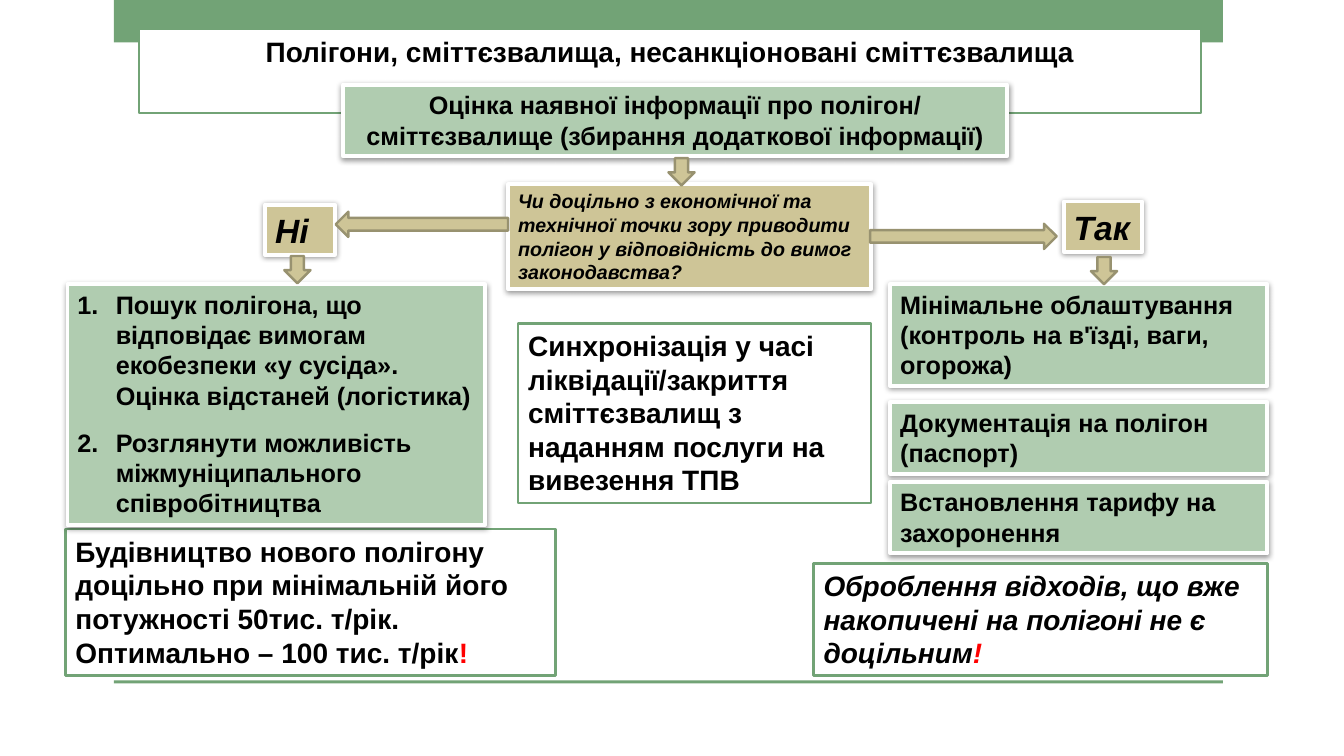
"""Builds the landfill decision flowchart slide."""
from dataclasses import dataclass

from lxml import etree
from pptx import Presentation
from pptx import util as u
from pptx.dml.color import RGBColor
from pptx.enum import shapes, text
from pptx.oxml.ns import qn

GREEN, PALE_GREEN, SAND, OLIVE = "72A376", "B0CCB0", "CEC597", "989270"
WHITE, BLACK, RED = "FFFFFF", "000000", "FF0000"
SHAPE = shapes.MSO_SHAPE
ALIGN = text.PP_ALIGN


@dataclass(frozen=True)
class Box:
    """A rectangle holding text, with a shadow when it is a flowchart step."""
    at: tuple[float, float, float, float]
    paragraphs: tuple[str, ...]
    size: int
    fill: str = WHITE
    italic: bool = False
    align: ALIGN = ALIGN.LEFT
    alert: str = ""
    numbered: bool = False
    space_after: int = 0


@dataclass(frozen=True)
class Arrow:
    """A block arrow between two steps."""
    at: tuple[float, float, float, float]
    kind: SHAPE


TITLE = Box((1.38, 0.29, 10.53, 0.44),
            ("Полігони, сміттєзвалища, несанкціоновані сміттєзвалища",), 20, align=ALIGN.CENTER)

BANDS = ((1.13, 0, 11, 0.42), (1.13, 6.75, 11, 0.03))

BOXES = (
    Box((0.65, 5.25, 4.86, 1.45),
        ("Будівництво нового полігону доцільно при мінімальній його потужності "
         "50тис. т/рік. Оптимально – 100 тис. т/рік",), 20, alert="!"),
    Box((3.4, 0.84, 6.59, 0.71),
        ("Оцінка наявної інформації про полігон/ сміттєзвалище "
         "(збирання додаткової інформації)",), 18, PALE_GREEN, align=ALIGN.CENTER),
    Box((8.83, 2.82, 3.74, 1.01),
        ("Мінімальне облаштування (контроль на в'їзді, ваги, огорожа)",), 18, PALE_GREEN),
    Box((8.83, 3.99, 3.74, 0.71), ("Документація на полігон (паспорт)",), 18, PALE_GREEN),
    Box((5.04, 1.83, 3.6, 1.04),
        ("Чи доцільно з економічної та технічної точки зору приводити полігон "
         "у відповідність до вимог законодавства?",), 14, SAND, italic=True),
    Box((8.83, 4.78, 3.74, 0.71), ("Встановлення тарифу на захоронення",), 18, PALE_GREEN),
    Box((0.67, 2.82, 4.14, 2.39),
        ("Пошук полігона, що відповідає вимогам екобезпеки «у сусіда». "
         "Оцінка відстаней (логістика)",
         "Розглянути можливість міжмуніципального співробітництва"),
        18, PALE_GREEN, numbered=True, space_after=12),
    Box((2.63, 2.03, 0.69, 0.5), ("Ні",), 24, SAND, italic=True),
    Box((10.55, 2, 0.78, 0.5), ("Так",), 24, SAND, italic=True),
    Box((8.07, 5.59, 4.5, 1.11),
        ("Оброблення відходів, що вже накопичені на полігоні не є доцільним",),
        20, italic=True, alert="!"),
    Box((5.14, 3.21, 3.5, 1.78),
        ("Синхронізація у часі ліквідації/закриття сміттєзвалищ "
         "з наданням послуги на вивезення ТПВ",), 20),
)

ARROWS = (
    Arrow((8.63, 2.22, 1.85, 0.25), SHAPE.RIGHT_ARROW),
    Arrow((3.33, 2.1, 1.71, 0.25), SHAPE.LEFT_ARROW),
    Arrow((2.82, 2.54, 0.26, 0.27), SHAPE.DOWN_ARROW),
    Arrow((10.82, 2.55, 0.26, 0.27), SHAPE.DOWN_ARROW),
    Arrow((6.63, 1.57, 0.26, 0.27), SHAPE.DOWN_ARROW),
)


def paint(color_format, color: str) -> None:
    """Set a colour from a hex string."""
    color_format.rgb = RGBColor.from_string(color)


def outline(shape, fill: str, line: str = "", width: float = 0) -> None:
    """Fill a shape and draw its border, or none."""
    shape.fill.solid()
    paint(shape.fill.fore_color, fill)
    if line:
        shape.line.width = u.Pt(width)
        paint(shape.line.color, line)
    else:
        shape.line.fill.background()


def add_shape(slide, kind: SHAPE, at: tuple[float, float, float, float]):
    """Add a preset shape without a shadow."""
    shape = slide.shapes.add_shape(kind, *map(u.Inches, at))
    shape.shadow.inherit = False
    return shape


def add_shadow(shape) -> None:
    """Give a shape a soft shadow below it."""
    effects = shape._element.spPr.find(qn("a:effectLst"))
    shadow = etree.SubElement(effects, qn("a:outerShdw"), blurRad=str(u.Pt(4)),
                              dist=str(u.Pt(1)), dir=str(88 * 60000), rotWithShape="0")
    color = etree.SubElement(shadow, qn("a:srgbClr"), val=BLACK)
    etree.SubElement(color, qn("a:alpha"), val="40000")


def write(paragraph, words: str, *, size: int, color: str = BLACK, italic: bool = False) -> None:
    """Append bold text to a paragraph."""
    run = paragraph.add_run()
    run.text = words
    run.font.name = "Arial"
    run.font.size = u.Pt(size)
    run.font.bold = True
    run.font.italic = italic
    paint(run.font.color, color)


def number(paragraph) -> None:
    """Number a paragraph with a hanging indent."""
    properties = paragraph._p.get_or_add_pPr()
    indent = u.Inches(0.38)
    properties.set("marL", str(indent))
    properties.set("indent", str(-indent))
    etree.SubElement(properties, qn("a:buFont"), typeface="+mj-lt")
    etree.SubElement(properties, qn("a:buAutoNum"), type="arabicPeriod")


def fill_box(shape, box: Box) -> None:
    """Format a shape as its box describes and write the text."""
    is_step = box.fill != WHITE
    outline(shape, box.fill, WHITE if is_step else GREEN, 2.75 if is_step else 1.75)
    if is_step:
        add_shadow(shape)
    frame = shape.text_frame
    frame.word_wrap = True
    frame.auto_size = text.MSO_AUTO_SIZE.SHAPE_TO_FIT_TEXT
    frame.vertical_anchor = text.MSO_ANCHOR.TOP
    for index, words in enumerate(box.paragraphs):
        paragraph = frame.add_paragraph() if index else frame.paragraphs[0]
        paragraph.alignment = box.align
        paragraph.space_after = u.Pt(box.space_after)
        if box.numbered:
            number(paragraph)
        write(paragraph, words, size=box.size, italic=box.italic)
    if box.alert:
        write(paragraph, box.alert, size=box.size, color=RED, italic=box.italic)


def main() -> None:
    """Build and save the slide."""
    deck = Presentation()
    deck.slide_width, deck.slide_height = u.Inches(13.33), u.Inches(7.5)
    slide = deck.slides.add_slide(deck.slide_layouts[5])
    title = slide.shapes.title
    title.left, title.top, title.width, title.height = map(u.Inches, TITLE.at)
    fill_box(title, TITLE)
    for at in BANDS:
        band = add_shape(slide, SHAPE.RECTANGLE, at)
        outline(band, GREEN)
        title._element.addprevious(band._element)
    for box in BOXES:
        fill_box(add_shape(slide, SHAPE.RECTANGLE, box.at), box)
    for arrow in ARROWS:
        outline(add_shape(slide, arrow.kind, arrow.at), SAND, OLIVE, 1.75)
    deck.save("out.pptx")


if __name__ == "__main__":
    main()
